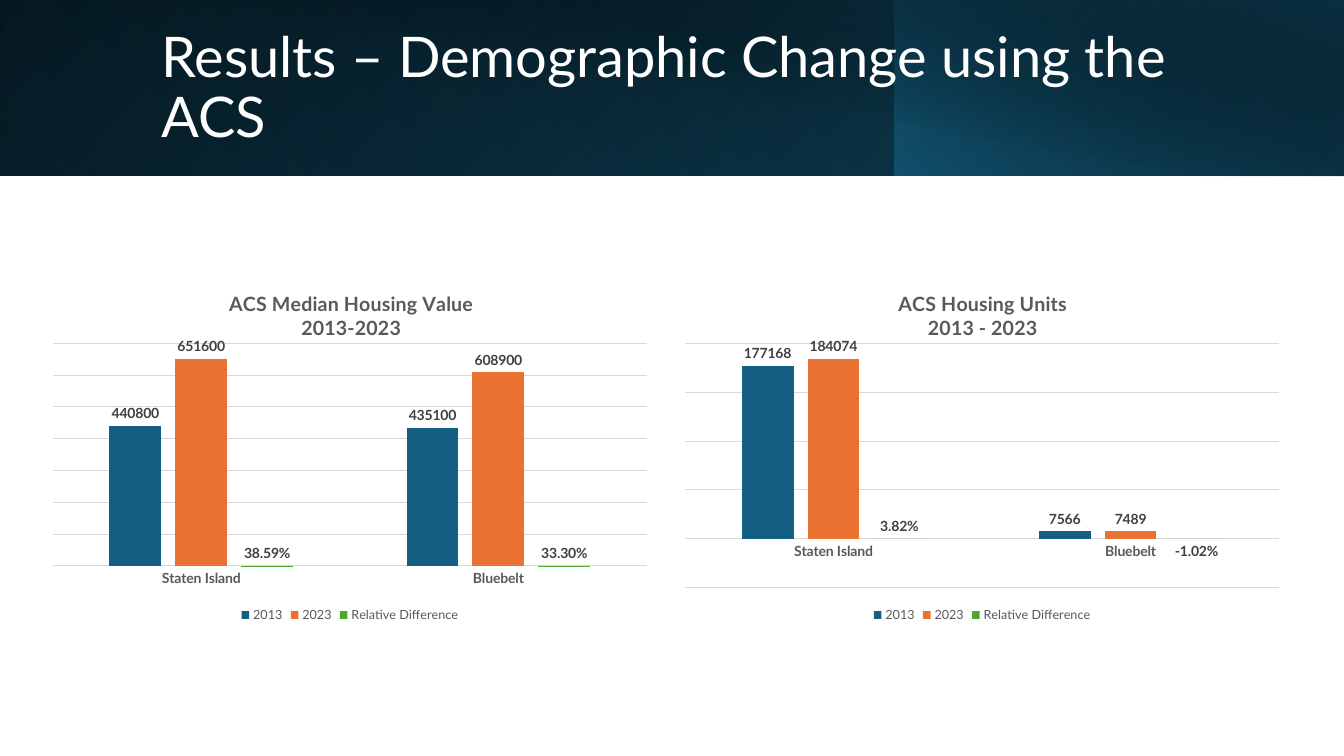
from lxml import etree
from pptx import Presentation
from pptx import util as u
from pptx.chart.data import CategoryChartData
from pptx.dml.color import RGBColor
from pptx.enum import chart as charts, shapes, text
from pptx.oxml import parse_xml
from pptx.oxml.ns import nsdecls, qn


def rgb(value):
    return RGBColor.from_string(value)


def set_layout(parent, index, **places):
    for old in parent.findall(qn("c:layout")):
        parent.remove(old)
    layout = etree.Element(qn("c:layout"))
    manual = etree.SubElement(layout, qn("c:manualLayout"))
    for tag, value in places.items():
        etree.SubElement(manual, qn(f"c:{tag}")).set("val", str(value))
    parent.insert(index, layout)


class SlideBuilder:
    font_name = "Lato"
    grey = "595959"
    label_color = "404040"
    grid_color = "D9D9D9"
    series_colors = ("156082", "E97132", "4EA72E")

    def __init__(self, presentation):
        self.slide = presentation.slides.add_slide(presentation.slide_layouts[5])

    def style(self, font, size, color, bold=False):
        font.name = self.font_name
        font.size = u.Pt(size)
        font.bold = bold
        font.color.rgb = rgb(color)

    def gradient(self, left, width, height, angle, stops, flip=True, rotation=0):
        shape = self.slide.shapes.add_shape(
            shapes.MSO_SHAPE.RECTANGLE, u.Inches(left), 0, u.Inches(width), u.Inches(height))
        shape.shadow.inherit = False
        shape.line.fill.background()
        shape.rotation = rotation
        properties = shape._element.spPr
        if flip:
            properties.find(qn("a:xfrm")).set("flipH", "1")
        stop_xml = "".join(
            f'<a:gs pos="{position * 1000}"><a:srgbClr val="{color}">'
            f'<a:alpha val="{alpha * 1000}"/></a:srgbClr></a:gs>'
            for position, color, alpha in stops)
        fill = parse_xml(
            f'<a:gradFill {nsdecls("a")} rotWithShape="1"><a:gsLst>{stop_xml}</a:gsLst>'
            f'<a:lin ang="{angle * 60000}" scaled="0"/></a:gradFill>')
        properties.find(qn("a:prstGeom")).addnext(fill)

    def title(self, wording, left, top, width, height):
        shape = self.slide.shapes.title
        shape.left, shape.top = u.Inches(left), u.Inches(top)
        shape.width, shape.height = u.Inches(width), u.Inches(height)
        frame = shape.text_frame
        frame.text = wording
        frame.word_wrap = True
        frame.auto_size = text.MSO_AUTO_SIZE.NONE
        frame.vertical_anchor = text.MSO_ANCHOR.MIDDLE
        paragraph = frame.paragraphs[0]
        paragraph.alignment = text.PP_ALIGN.LEFT
        paragraph.line_spacing = 0.9
        self.style(paragraph.font, 40, "FFFFFF")
        tree = shape._element.getparent()
        tree.append(shape._element)

    def column_chart(self, left, heading, heading_left, values, scale, plot_height):
        data = CategoryChartData()
        data.categories = ["Staten Island", "Bluebelt"]
        formats = ("General", "General", "0.00%")
        names = ("2013", "2023", "Relative Difference")
        for name, numbers, number_format in zip(names, values, formats):
            data.add_series(name, numbers, number_format)
        chart = self.slide.shapes.add_chart(
            charts.XL_CHART_TYPE.COLUMN_CLUSTERED, u.Inches(left), u.Inches(2.66),
            u.Inches(6.14), u.Inches(3.56), data).chart
        self.style(chart.font, 10, "000000")
        self.chart_heading(chart, heading, heading_left)
        self.chart_axes(chart, scale)

        plot = chart.plots[0]
        plot.gap_width = 219
        plot.overlap = -27
        plot.vary_by_categories = False
        for series, color, number_format in zip(plot.series, self.series_colors, formats):
            series.format.fill.solid()
            series.format.fill.fore_color.rgb = rgb(color)
            series.invert_if_negative = False
            labels = series.data_labels
            labels.show_value = True
            labels.position = charts.XL_LABEL_POSITION.OUTSIDE_END
            labels.number_format = number_format
            labels.number_format_is_linked = False
            self.style(labels.font, 10, self.label_color, True)
        set_layout(plot._element.getparent(), 0, layoutTarget="inner", xMode="edge",
                   yMode="edge", x=0.02, y=0.21, w=0.96, h=plot_height)

        chart.has_legend = True
        chart.legend.position = charts.XL_LEGEND_POSITION.BOTTOM
        chart.legend.include_in_layout = False
        self.style(chart.legend.font, 9, self.grey)

    def chart_heading(self, chart, heading, left):
        chart.has_title = True
        frame = chart.chart_title.text_frame
        frame.text = heading
        for paragraph in frame.paragraphs:
            self.style(paragraph.font, 14, self.grey, True)
        set_layout(chart.chart_title._element, 1, xMode="edge", yMode="edge", x=left, y=0.05)

    def chart_axes(self, chart, scale):
        categories = chart.category_axis
        categories.major_tick_mark = charts.XL_TICK_MARK.NONE
        self.style(categories.tick_labels.font, 10, self.grey, True)
        amounts = chart.value_axis
        amounts.minimum_scale, amounts.maximum_scale, amounts.major_unit = scale
        amounts.has_major_gridlines = True
        for line in (categories.format.line, amounts.major_gridlines.format.line):
            line.color.rgb = rgb(self.grid_color)
            line.width = u.Pt(0.75)
        amounts.visible = False


def main():
    presentation = Presentation()
    presentation.slide_width = u.Inches(13.33)
    presentation.slide_height = u.Inches(7.5)
    builder = SlideBuilder(presentation)
    builder.gradient(0, 13.33, 1.74, 140, [(0, "000000", 100), (100, "104862", 100)])
    builder.gradient(0, 8.88, 1.74, 230, [(20, "156082", 0), (100, "0B3041", 55)], rotation=180)
    builder.gradient(8.87, 4.46, 1.74, 220, [(0, "156082", 66), (100, "000000", 30)])
    builder.gradient(0.5, 12.83, 1.75, 280, [(50, "000000", 0), (99, "0B3041", 52)], flip=False)
    builder.title("Results – Demographic Change using the ACS", 1.5, 0.32, 10.82, 1.13)
    builder.column_chart(
        0.4, "ACS Median Housing Value\n2013-2023", 0.3,
        [(440800, 435100), (651600, 608900), (0.3859, 0.333)], (0, 700000, 100000), 0.62)
    builder.column_chart(
        6.67, "ACS Housing Units\n2013 - 2023", 0.36,
        [(177168, 7566), (184074, 7489), (0.0382, -0.0102)], (-50000, 200000, 50000), 0.68)
    presentation.save("out.pptx")


if __name__ == "__main__":
    main()
